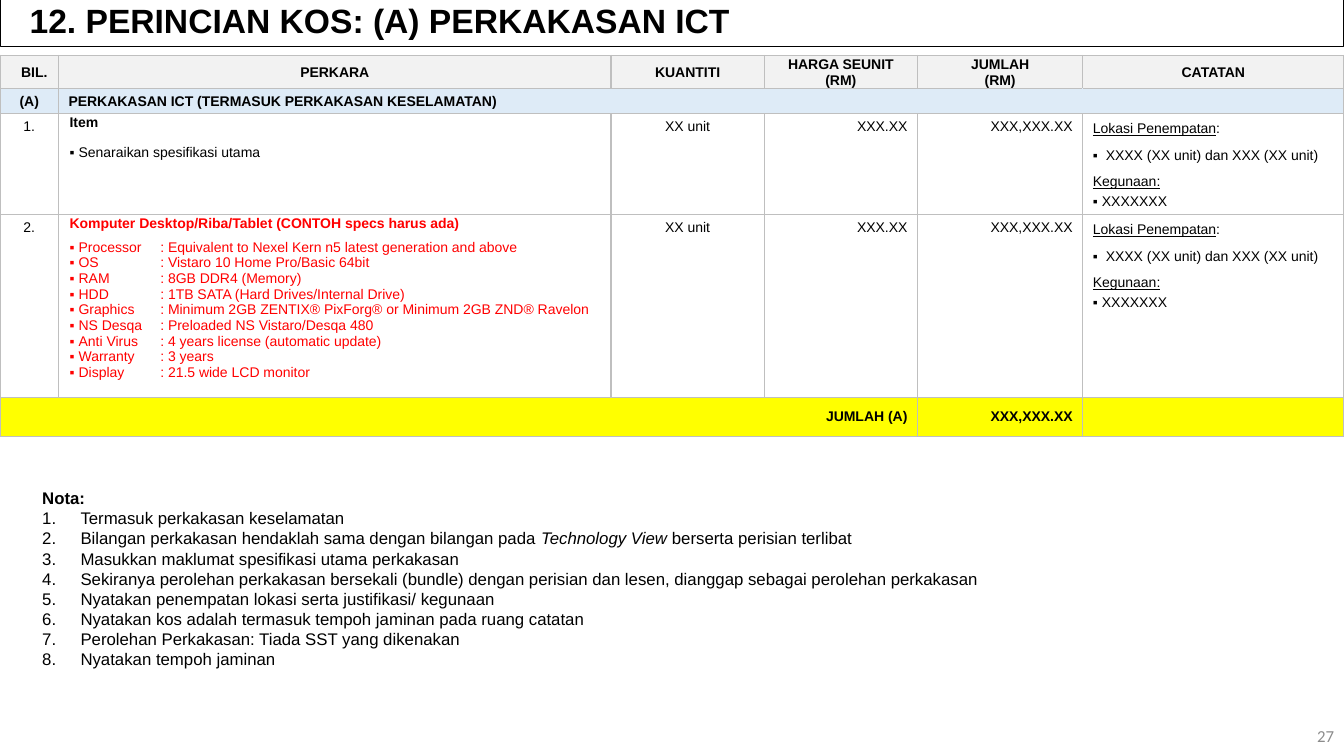
from dataclasses import dataclass
from typing import Optional, Union

from lxml.etree import SubElement
from pptx import Presentation
from pptx.dml.color import RGBColor
from pptx.enum.shapes import MSO_SHAPE
from pptx.enum.text import MSO_ANCHOR, MSO_AUTO_SIZE, PP_ALIGN
from pptx.oxml.ns import qn
from pptx.util import Emu, Inches, Pt


@dataclass(frozen=True)
class Theme:
    font: str = "Arial"
    number_font: str = "Calibri"
    ink: str = "000000"
    paper: str = "FFFFFF"
    header: str = "F2F2F2"
    section: str = "DEEBF7"
    total: str = "FFFF00"
    example: str = "FF0000"
    border: str = "BFBFBF"
    muted: str = "8C8C8C"
    title_size: int = 24
    note_size: int = 12
    table_size: int = 10


THEME = Theme()
LEFT, CENTER, RIGHT, JUSTIFY = PP_ALIGN.LEFT, PP_ALIGN.CENTER, PP_ALIGN.RIGHT, PP_ALIGN.JUSTIFY
UNITS_PER_INCH = 10
COLUMNS = (5.8, 54.8, 15.2, 15.2, 16.4, 25.9)
ROWS = (3.3, 2.5, 10, 18.1, 3.9)
SPEC_TAB = 10


def grid(units: float) -> Emu:
    return Inches(units / UNITS_PER_INCH)


@dataclass(frozen=True)
class Span:
    text: str
    bold: bool = False
    italic: bool = False
    underline: bool = False
    color: str = THEME.ink


@dataclass(frozen=True)
class Para:
    spans: tuple[Span, ...]
    align: PP_ALIGN = LEFT
    margin: float = 0
    hanging: float = 0
    bullet: str = ""
    line: Optional[Union[float, Pt]] = None
    before: float = 0
    after: float = 0
    tab: float = 0


@dataclass(frozen=True)
class Entry:
    row: int
    column: int
    paras: tuple[Para, ...]
    anchor: MSO_ANCHOR = MSO_ANCHOR.TOP
    tight: bool = False


def line_of(text: str, align: PP_ALIGN = LEFT, bold: bool = False, **layout) -> Para:
    return Para((Span(text, bold=bold),), align, **layout)


def write(frame, paras: tuple[Para, ...], size: float = THEME.table_size,
          font: str = THEME.font) -> None:
    for index, item in enumerate(paras):
        para = frame.paragraphs[0] if index == 0 else frame.add_paragraph()
        para.alignment = item.align
        properties = para._p.get_or_add_pPr()
        properties.set("marL", str(grid(item.margin)))
        properties.set("indent", str(-grid(item.hanging)))
        if item.bullet:
            SubElement(properties, qn("a:buFont"), typeface=font)
        if item.bullet == "1.":
            SubElement(properties, qn("a:buAutoNum"), type="arabicPeriod")
        elif item.bullet:
            SubElement(properties, qn("a:buChar"), char=item.bullet)
        if item.tab:
            stops = SubElement(properties, qn("a:tabLst"))
            SubElement(stops, qn("a:tab"), pos=str(grid(item.tab)), algn="l")
        if item.line:
            para.line_spacing = item.line
        para.space_before = Pt(item.before)
        para.space_after = Pt(item.after)
        for part in item.spans:
            span = para.add_run()
            span.text = part.text
            span.font.name = font
            span.font.size = Pt(size)
            span.font.bold = part.bold
            span.font.italic = part.italic
            span.font.underline = part.underline
            span.font.color.rgb = RGBColor.from_string(part.color)


def add_text(page, place: tuple[float, ...], paras: tuple[Para, ...], **look):
    box = page.shapes.add_textbox(*map(grid, place))
    box.text_frame.word_wrap = True
    write(box.text_frame, paras, **look)
    return box


def style_cell(cell, fill: str, hidden: str) -> None:
    properties = cell._tc.get_or_add_tcPr()
    for side in "LRTB":
        edge = SubElement(properties, qn(f"a:ln{side}"), w=str(Pt(1)))
        color = SubElement(SubElement(edge, qn("a:solidFill")), qn("a:srgbClr"))
        color.set("val", fill if side in hidden else THEME.border)
    cell.fill.solid()
    cell.fill.fore_color.rgb = RGBColor.from_string(fill)
    end = cell.text_frame.paragraphs[0]._p.get_or_add_endParaRPr()
    end.set("sz", str(THEME.table_size * 100))


HEADINGS = (("BIL.",), ("PERKARA",), ("KUANTITI",), ("HARGA SEUNIT", "(RM)"),
            ("JUMLAH", "(RM)"), ("CATATAN",))
SPECS = (
    ("Processor", "Equivalent to Nexel Kern n5 latest generation and above"),
    ("OS", "Vistaro 10 Home Pro/Basic 64bit"),
    ("RAM", "8GB DDR4 (Memory)"),
    ("HDD", "1TB SATA (Hard Drives/Internal Drive)"),
    ("Graphics", "Minimum 2GB ZENTIX® PixForg® or Minimum 2GB ZND® Ravelon"),
    ("NS Desqa", "Preloaded NS Vistaro/Desqa 480"),
    ("Anti Virus", "4 years license (automatic update)"),
    ("Warranty", "3 years"),
    ("Display", "21.5 wide LCD monitor"),
)
NOTES = (
    (Span("Termasuk perkakasan keselamatan"),),
    (Span("Bilangan perkakasan hendaklah sama dengan bilangan pada "),
     Span("Technology View ", italic=True), Span("berserta perisian terlibat")),
    (Span("Masukkan maklumat spesifikasi utama perkakasan"),),
    (Span("Sekiranya perolehan perkakasan bersekali (bundle) dengan perisian dan lesen, "
          "dianggap sebagai perolehan perkakasan"),),
    (Span("Nyatakan penempatan lokasi serta justifikasi/ kegunaan"),),
    (Span("Nyatakan kos adalah termasuk tempoh jaminan pada ruang catatan"),),
    (Span("Perolehan Perkakasan: Tiada SST yang dikenakan"),),
    (Span("Nyatakan tempoh jaminan"),),
)
REMARKS = (
    Para((Span("Lokasi Penempatan", underline=True), Span(":")), line=1.15, after=3),
    line_of(" XXXX (XX unit) dan XXX (XX unit)", margin=0.9, hanging=0.9, bullet="▪",
            line=1.15, before=3, after=3),
    Para((Span("Kegunaan:", underline=True),), JUSTIFY, line=1.15, before=3, after=3),
    line_of("XXXXXXX", JUSTIFY, margin=0.9, hanging=0.9, bullet="▪"),
)
ITEM = (
    line_of("Item", bold=True, margin=1, after=6),
    line_of("Senaraikan spesifikasi utama", margin=1.9, hanging=0.9, bullet="▪", line=Pt(15.1)),
)
COMPUTER = (
    Para((Span("Komputer Desktop/Riba/Tablet (CONTOH specs harus ada)", bold=True,
               color=THEME.example),), margin=1, after=6),
    *(Para((Span(f"{name}\t: {value}", color=THEME.example),), margin=1.9, hanging=0.9,
           bullet="▪", tab=SPEC_TAB) for name, value in SPECS),
)


def table_entries() -> list[Entry]:
    middle = MSO_ANCHOR.MIDDLE
    entries = [Entry(0, column, tuple(line_of(text, CENTER, True, margin=0 if column else 1)
                                      for text in heading), middle, True)
               for column, heading in enumerate(HEADINGS)]
    entries += [
        Entry(1, 0, (line_of("(A)", CENTER, True),), middle),
        Entry(1, 1, (line_of("PERKAKASAN ICT (TERMASUK PERKAKASAN KESELAMATAN)", bold=True),), middle),
        Entry(4, 0, (line_of("JUMLAH (A)", RIGHT, True),), middle),
        Entry(4, 4, (line_of("XXX,XXX.XX", RIGHT, True),), middle),
    ]
    for number, details in enumerate((ITEM, COMPUTER), start=1):
        row = number + 1
        entries += [
            Entry(row, 0, (line_of(f"{number}.", CENTER),)),
            Entry(row, 1, details, tight=True),
            Entry(row, 2, (line_of("XX unit", CENTER),)),
            Entry(row, 3, (line_of("XXX.XX", RIGHT),)),
            Entry(row, 4, (line_of("XXX,XXX.XX", RIGHT),)),
            Entry(row, 5, REMARKS),
        ]
    return entries


def add_cost_table(page) -> None:
    place = map(grid, (0, 5.5, sum(COLUMNS), sum(ROWS)))
    table = page.shapes.add_table(len(ROWS), len(COLUMNS), *place).table
    table.first_row = table.horz_banding = False
    for column, width in zip(table.columns, COLUMNS):
        column.width = grid(width)
    fills = (THEME.header, THEME.section, THEME.paper, THEME.paper, THEME.total)
    hidden_sides = {(1, 1): "R", (1, 4): "LR", (1, 5): "L"}
    for row_index, (row, height, fill) in enumerate(zip(table.rows, ROWS, fills)):
        row.height = grid(height)
        for column_index, cell in enumerate(row.cells):
            style_cell(cell, fill, hidden_sides.get((row_index, column_index), ""))
            if row_index == 1:
                cell.margin_top = cell.margin_bottom = grid(0.3)
    table.cell(1, 1).merge(table.cell(1, 4))
    table.cell(4, 0).merge(table.cell(4, 3))
    for entry in table_entries():
        cell = table.cell(entry.row, entry.column)
        cell.vertical_anchor = entry.anchor
        if entry.tight:
            cell.margin_left = cell.margin_right = cell.margin_top = grid(0.1)
            cell.margin_bottom = 0
        write(cell.text_frame, entry.paras)


def add_title(page) -> None:
    box = page.shapes.add_shape(MSO_SHAPE.RECTANGLE, *map(grid, (0.05, -0.1, 133.2, 4.7)))
    box.shadow.inherit = False
    box.fill.background()
    box.line.color.rgb = RGBColor.from_string(THEME.ink)
    box.line.width = Pt(0.75)
    box.text_frame.vertical_anchor = MSO_ANCHOR.MIDDLE
    title = line_of("12. PERINCIAN KOS: (A) PERKAKASAN ICT", bold=True, margin=1.9, line=0.9)
    write(box.text_frame, (title,), size=THEME.title_size)


def main() -> None:
    deck = Presentation()
    deck.slide_width, deck.slide_height = Inches(13.33), Inches(7.5)
    page = deck.slides.add_slide(deck.slide_layouts[6])
    add_title(page)
    add_cost_table(page)
    notes = (line_of("Nota:", bold=True),
             *(Para(spans, margin=3.8, hanging=3.8, bullet="1.") for spans in NOTES))
    box = add_text(page, (3.2, 47.9, 126.9, 19.2), notes, size=THEME.note_size)
    box.text_frame.auto_size = MSO_AUTO_SIZE.SHAPE_TO_FIT_TEXT
    number = Para((Span("27", color=THEME.muted),), RIGHT)
    box = add_text(page, (103.3, 71, 30, 4), (number,), size=THEME.note_size,
                   font=THEME.number_font)
    box.text_frame.vertical_anchor = MSO_ANCHOR.MIDDLE
    deck.save("out.pptx")


if __name__ == "__main__":
    main()
